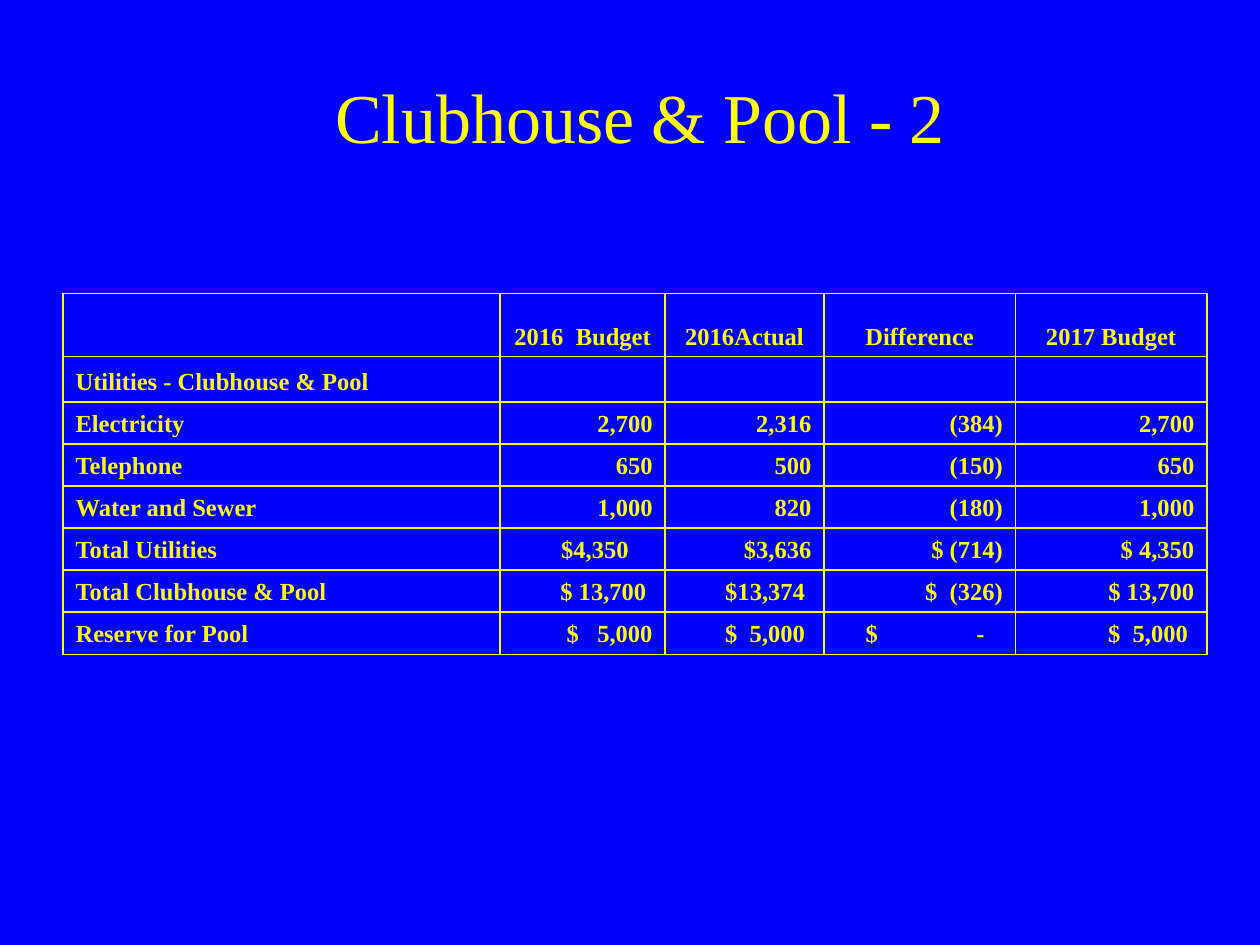
from lxml.etree import SubElement
from pptx import Presentation
from pptx.dml.color import RGBColor
from pptx.enum.text import MSO_ANCHOR as Anchor, PP_ALIGN as Align
from pptx.oxml.ns import qn
from pptx.util import Inches, Pt

COLORS = {"background": "0000FF", "ink": "FFFF00"}
FONT = "Times New Roman"
TITLE_FORMAT = {"name": FONT, "size": Pt(40)}
CELL_FORMAT = {"name": FONT, "size": Pt(14), "bold": True}

COLUMN_WIDTHS = [3.47, 1.31, 1.26, 1.52, 1.52]
ROW_HEIGHTS = [0.5, 0.36] + [0.31] * 6
BUDGET = [
    ["", "2016  Budget", "2016Actual", "Difference", "2017 Budget"],
    ["Utilities - Clubhouse & Pool", "", "", "", ""],
    ["Electricity", "2,700", "2,316", "(384)", "2,700"],
    ["Telephone", "650", "500", "(150)", "650"],
    ["Water and Sewer", "1,000", "820", "(180)", "1,000"],
    ["Total Utilities", "$4,350", "$3,636", "$ (714)", "$ 4,350"],
    ["Total Clubhouse & Pool", "$ 13,700", "$13,374", "$  (326)", "$ 13,700"],
    ["Reserve for Pool", "$   5,000", "$  5,000", "$\t-", "$  5,000"],
]
# Right margins of the amounts that stand in from the cell edge
RIGHT_MARGINS = {(5, 1): 0.29, (6, 1): 0.15, (6, 2): 0.15, (7, 2): 0.15, (7, 4): 0.15}


def color(name):
    return RGBColor.from_string(COLORS[name])


def write(para, text, values, align):
    para.alignment = align
    span = para.add_run()
    span.text = text
    for name, value in values.items():
        setattr(span.font, name, value)
    span.font.color.rgb = color("ink")


def add_title(page, text):
    box = page.shapes.add_textbox(Inches(0.83), Inches(0.58), Inches(8.5), Inches(0.67))
    frame = box.text_frame
    frame.word_wrap = True
    frame.vertical_anchor = Anchor.MIDDLE
    write(frame.paragraphs[0], text, TITLE_FORMAT, Align.CENTER)


def add_borders(cell):
    properties = cell._tc.get_or_add_tcPr()
    for position, side in enumerate(("lnL", "lnR", "lnT", "lnB")):
        line = properties.makeelement(qn(f"a:{side}"), {"w": str(Pt(1))})
        properties.insert(position, line)
        fill = SubElement(line, qn("a:solidFill"))
        SubElement(fill, qn("a:srgbClr"), val=COLORS["ink"])


def add_tab_stop(para, inches):
    stops = SubElement(para._p.get_or_add_pPr(), qn("a:tabLst"))
    SubElement(stops, qn("a:tab"), pos=str(Inches(inches)), algn="l")


def cell_alignment(row, column, text):
    if row == 0:
        return Align.CENTER
    return Align.LEFT if column == 0 or "\t" in text else Align.RIGHT


def fill_cell(cell, row, column, text):
    cell.fill.background()
    add_borders(cell)
    cell.vertical_anchor = Anchor.BOTTOM
    cell.margin_right = Inches(RIGHT_MARGINS.get((row, column), 0.1))
    para = cell.text_frame.paragraphs[0]
    if not text:
        # Keeps an empty cell from stretching its row
        SubElement(para._p, qn("a:endParaRPr"), sz="1400")
        return
    write(para, text, CELL_FORMAT, cell_alignment(row, column, text))
    if "\t" in text:
        cell.margin_left = Inches(0.33)
        add_tab_stop(para, 0.88)


def add_budget_table(page):
    frame = page.shapes.add_table(
        len(BUDGET), len(COLUMN_WIDTHS), Inches(0.5), Inches(2.33),
        Inches(sum(COLUMN_WIDTHS)), Inches(sum(ROW_HEIGHTS)))
    table = frame.table
    table.first_row = table.horz_banding = False
    for column, width in zip(table.columns, COLUMN_WIDTHS):
        column.width = Inches(width)
    for row, height in zip(table.rows, ROW_HEIGHTS):
        row.height = Inches(height)
    for row, texts in enumerate(BUDGET):
        for column, text in enumerate(texts):
            fill_cell(table.cell(row, column), row, column, text)


def main():
    deck = Presentation()
    deck.slide_width, deck.slide_height = Inches(10), Inches(7.5)
    page = deck.slides.add_slide(deck.slide_layouts[6])
    page.background.fill.solid()
    page.background.fill.fore_color.rgb = color("background")
    add_title(page, "Clubhouse & Pool - 2")
    add_budget_table(page)
    deck.save("out.pptx")


if __name__ == "__main__":
    main()
